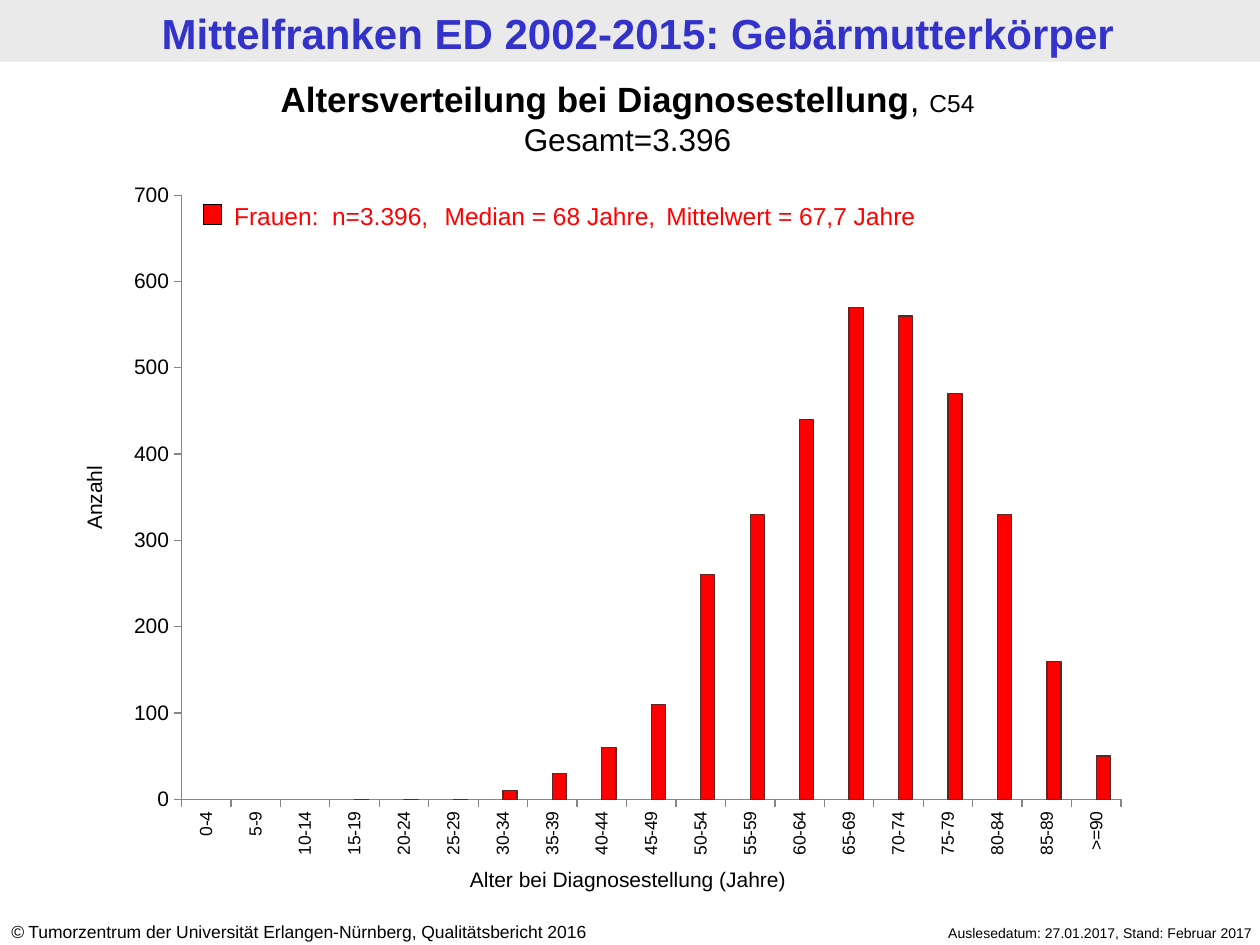
from dataclasses import dataclass

from lxml import etree
from pptx import Presentation
from pptx.chart.data import CategoryChartData
from pptx.dml.color import RGBColor
from pptx.enum.chart import XL_CHART_TYPE, XL_TICK_MARK
from pptx.enum.shapes import MSO_SHAPE
from pptx.enum.text import PP_ALIGN
from pptx.oxml import parse_xml
from pptx.oxml.ns import nsdecls, qn
from pptx.util import Pt

COLORS = {
    "band": "EAEAEA", "title": "3333CC", "text": "000000", "women": "FF0000",
    "women_line": "632523", "men": "3366FF", "men_line": "0033CC",
    "axis": "868686", "plot": "FFFFFF",
}
FONT = "Arial"
AGE_GROUPS = [f"{age}-{age + 4}" for age in range(0, 90, 5)] + [">=90"]
WOMEN = [None, None, None, 0, 0, 0, 10, 30, 60, 110, 260, 330, 440, 570, 560,
         470, 330, 160, 50]


@dataclass
class Run:
    text: str
    size: float | None = None
    bold: bool | None = None
    italic: bool | None = None


@dataclass
class Label:
    """A text box: position and size in points, one run list per paragraph."""
    left: float
    top: float
    width: float
    height: float
    paragraphs: list[list[Run]]
    size: float
    color: str = "text"
    align: PP_ALIGN = PP_ALIGN.LEFT
    bold: bool = False
    rotation: float = 0
    tabs: tuple[float, ...] = ()


LABELS = [
    Label(4.5, 0.7, 720, 35.3, [[Run("Mittelfranken ED 2002-2015: Gebärmutterkörper")]],
          24, "title", PP_ALIGN.CENTER, bold=True),
    Label(-0.7, 522.7, 377, 19.4,
          [[Run("©", italic=True),
            Run(" Tumorzentrum der Universität Erlangen-Nürnberg, Qualitätsbericht 2016")]], 10),
    Label(478.8, 524.9, 244, 17.3, [[Run("Auslesedatum: 27.01.2017, Stand: Februar 2017")]],
          8, align=PP_ALIGN.RIGHT),
    Label(-2.9, 41, 723, 53.3,
          [[Run("Altersverteilung bei Diagnosestellung", bold=True), Run(", "),
            Run("C54", size=14)],
           [Run("Gesamt=3.396", size=18)]],
          20, align=PP_ALIGN.CENTER),
    Label(126.7, 111.6, 493, 24.5,
          [[Run("Frauen:\tn=3.396,\tMedian = 68 Jahre,\tMittelwert = 67,7 Jahre")]],
          14, "women", tabs=(56, 63.5, 120.3, 247)),
    Label(248.4, 491.8, 221, 21.6, [[Run("Alter bei Diagnosestellung (Jahre)")]],
          12, align=PP_ALIGN.CENTER),
    Label(-40.3, 273.6, 188, 21.6, [[Run("Anzahl")]],
          12, align=PP_ALIGN.CENTER, rotation=270),
]


def rgb(name: str) -> RGBColor:
    return RGBColor.from_string(COLORS[name])


def add_label(slide, label: Label) -> None:
    box = slide.shapes.add_textbox(Pt(label.left), Pt(label.top),
                                   Pt(label.width), Pt(label.height))
    box.rotation = label.rotation
    frame = box.text_frame
    frame.word_wrap = True
    for index, runs in enumerate(label.paragraphs):
        paragraph = frame.add_paragraph() if index else frame.paragraphs[0]
        paragraph.alignment = label.align
        if label.tabs:
            tab_list = etree.SubElement(paragraph._p.get_or_add_pPr(), qn("a:tabLst"))
            for position in label.tabs:
                etree.SubElement(tab_list, qn("a:tab"), pos=str(Pt(position)), algn="l")
        font = paragraph.font
        font.name, font.size, font.bold = FONT, Pt(label.size), label.bold
        font.color.rgb = rgb(label.color)
        for item in runs:
            run = paragraph.add_run()
            run.text = item.text
            if item.size:
                run.font.size = Pt(item.size)
            run.font.bold = item.bold
            run.font.italic = item.italic


def add_rectangle(slide, left: float, top: float, width: float, height: float,
                  fill: str, line: str | None = None) -> None:
    shape = slide.shapes.add_shape(MSO_SHAPE.RECTANGLE, Pt(left), Pt(top),
                                   Pt(width), Pt(height))
    shape.shadow.inherit = False
    shape.fill.solid()
    shape.fill.fore_color.rgb = rgb(fill)
    if line:
        shape.line.color.rgb = rgb(line)
        shape.line.width = Pt(0.75)
    else:
        shape.line.fill.background()


def style_axis(axis, size: float) -> None:
    axis.has_major_gridlines = False
    axis.major_tick_mark = XL_TICK_MARK.OUTSIDE
    axis.minor_tick_mark = XL_TICK_MARK.NONE
    axis.format.line.color.rgb = rgb("axis")
    axis.format.line.width = Pt(0.75)
    font = axis.tick_labels.font
    font.name, font.size, font.color.rgb = FONT, Pt(size), rgb("text")


def set_plot_area(chart) -> None:
    """Fix the inner plot area as fractions of the chart and fill it."""
    plot_area = chart._chartSpace.chart.plotArea
    for layout in plot_area.findall(qn("c:layout")):
        plot_area.remove(layout)
    layout = etree.Element(qn("c:layout"))
    manual = etree.SubElement(layout, qn("c:manualLayout"))
    settings = {"layoutTarget": "inner", "xMode": "edge", "yMode": "edge",
                "x": "0.065", "y": "0.036", "w": "0.914", "h": "0.864"}
    for tag, value in settings.items():
        etree.SubElement(manual, qn(f"c:{tag}"), val=value)
    plot_area.insert(0, layout)
    plot_area.append(parse_xml(
        f'<c:spPr {nsdecls("c", "a")}><a:solidFill><a:srgbClr val="{COLORS["plot"]}"/>'
        '</a:solidFill></c:spPr>'))


def add_age_chart(slide) -> None:
    data = CategoryChartData()
    data.categories = AGE_GROUPS
    data.add_series("Series 1", [None] * len(AGE_GROUPS))
    data.add_series("Series 2", WOMEN)
    chart = slide.shapes.add_chart(XL_CHART_TYPE.COLUMN_CLUSTERED, Pt(65.5), Pt(97.2),
                                   Pt(587.5), Pt(399.6), data).chart
    chart.has_legend = False
    chart.has_title = False
    chart.font.name, chart.font.size = "Calibri", Pt(18)
    chart.font.color.rgb = rgb("text")
    plot = chart.plots[0]
    plot.gap_width, plot.overlap = 150, 0
    plot.vary_by_categories = False
    for series, color in zip(plot.series, ("men", "women")):
        series.format.fill.solid()
        series.format.fill.fore_color.rgb = rgb(color)
        series.format.line.color.rgb = rgb(f"{color}_line")
        series.format.line.width = Pt(0.75)
    style_axis(chart.category_axis, 10)
    chart.category_axis.tick_labels.font._element.getparent().getparent().getparent().find(
        qn("a:bodyPr")).set("rot", "-5400000")
    value_axis = chart.value_axis
    style_axis(value_axis, 12)
    value_axis.minimum_scale, value_axis.maximum_scale = 0, 700
    value_axis.major_unit = 100
    set_plot_area(chart)


def main() -> None:
    presentation = Presentation()
    presentation.slide_width, presentation.slide_height = Pt(720), Pt(540)
    slide = presentation.slides.add_slide(presentation.slide_layouts[6])
    add_rectangle(slide, 0, 0, 720, 35.3, "band")
    add_age_chart(slide)
    for label in LABELS:
        add_label(slide, label)
    add_rectangle(slide, 116.3, 116.8, 10.5, 11.5, "women", "text")
    presentation.save("out.pptx")


if __name__ == "__main__":
    main()
